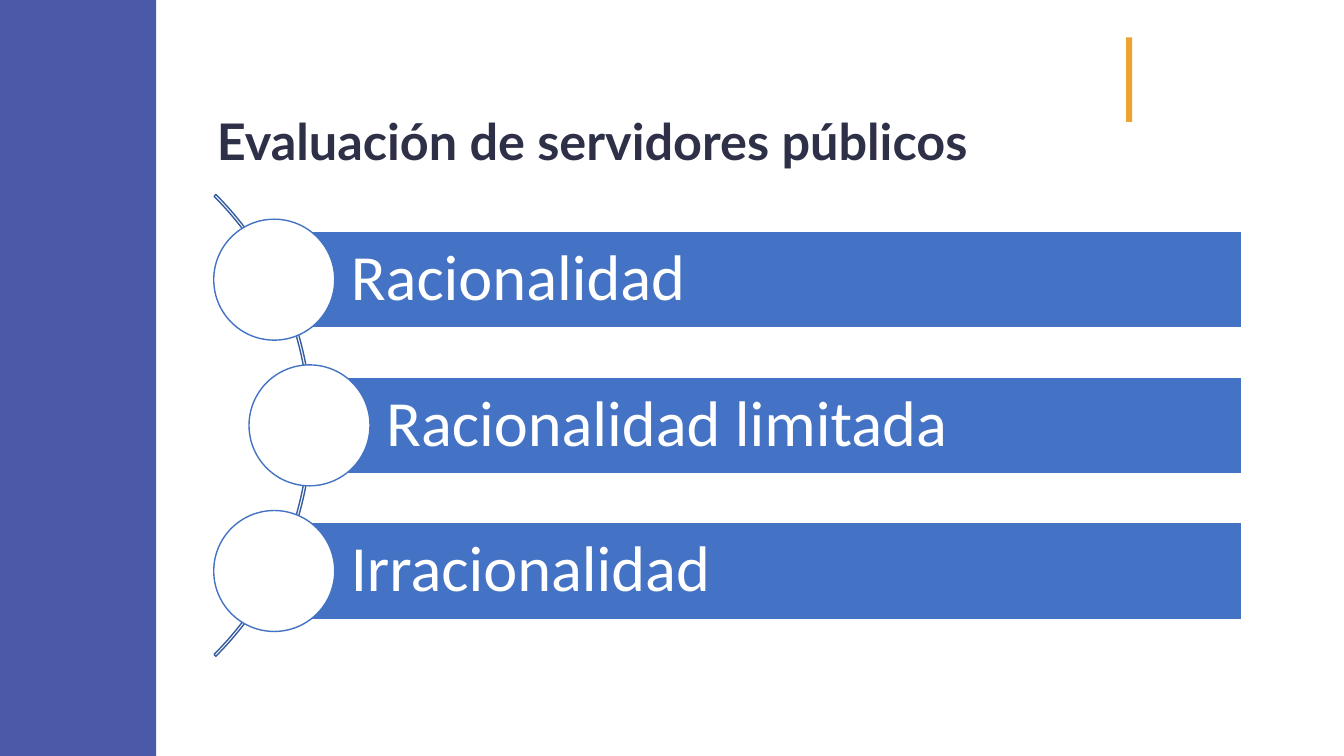
from pptx import Presentation, util as u
from pptx.dml.color import RGBColor
from pptx.enum import shapes, text

THEME = {
    "sidebar": "4A5AA8", "accent": "EEA232", "arc": "365B9D", "bar": "4472C4",
    "white": "FFFFFF", "title": "2E3048",
    "title_font": "Lato", "title_size": 36,
    "bar_font": "Calibri", "bar_size": 46,
}
SHAPE = shapes.MSO_SHAPE


def add_shape(kind, box, fill=None, line=None):
    """Add a flat preset shape; box is left, top, width, height in inches."""
    shape = slide.shapes.add_shape(kind, *map(u.Inches, box))
    shape.shadow.inherit = False
    for part, color in ((shape.fill, fill), (shape.line.fill, line)):
        if color:
            part.solid()
            part.fore_color.rgb = RGBColor.from_string(THEME[color])
        else:
            part.background()
    if line:
        shape.line.width = u.Pt(1)
    return shape


def write(shape, words, name, color, bold, margins):
    """Fill a shape with one left-aligned, vertically centred line."""
    frame = shape.text_frame
    frame.text = words
    side_names = ("margin_left", "margin_top", "margin_right", "margin_bottom")
    frame_format = {
        "word_wrap": True,
        "auto_size": text.MSO_AUTO_SIZE.NONE,
        "vertical_anchor": text.MSO_ANCHOR.MIDDLE,
        **dict(zip(side_names, map(u.Inches, margins))),
    }
    for key, value in frame_format.items():
        setattr(frame, key, value)
    paragraph = frame.paragraphs[0]
    paragraph.alignment = text.PP_ALIGN.LEFT
    paragraph.line_spacing = 0.9
    font = paragraph.runs[0].font
    font_format = {
        "name": THEME[name + "_font"],
        "size": u.Pt(THEME[name + "_size"]),
        "bold": bold,
    }
    for key, value in font_format.items():
        setattr(font, key, value)
    font.color.rgb = RGBColor.from_string(THEME[color])


presentation = Presentation()
presentation.slide_width = u.Inches(13.33)
presentation.slide_height = u.Inches(7.5)
slide = presentation.slides.add_slide(presentation.slide_layouts[5])

add_shape(SHAPE.RECTANGLE, (0, 0, 1.55, 7.5), "sidebar")
add_shape(SHAPE.RECTANGLE, (11.17, 0.37, 0.06, 0.84), "accent")

title = slide.shapes.title
title_box = {"left": 2.05, "top": 0.87, "width": 8.95, "height": 1.13}
for key, value in title_box.items():
    setattr(title, key, u.Inches(value))
write(title, "Evaluación de servidores públicos", "title", "title", True,
      (0.1, 0.05, 0.1, 0.05))

# Rows are spaced evenly around the arc's middle; the middle row is indented.
middle, row_pitch = 4.22, 1.445
bar_right, bar_height = 12.32, 0.96
circle_size, circle_center, indent = 1.2, 2.72, 0.35
arc_size = 6.48

arc = add_shape(SHAPE.BLOCK_ARC,
                (-3.39, middle - arc_size / 2, arc_size, arc_size), line="arc")
for index, value in enumerate((189, 27, 0.004)):
    arc.adjustments[index] = value

rows = ("Racionalidad", "Racionalidad limitada", "Irracionalidad")
for index, words in enumerate(rows):
    row_center = middle + (index - 1) * row_pitch
    left = circle_center + indent * (index == 1)
    bar = add_shape(SHAPE.RECTANGLE,
                    (left, row_center - bar_height / 2,
                     bar_right - left, bar_height), "bar", "white")
    write(bar, words, "bar", "white", False, (0.76, 0.13, 0.13, 0.13))
    add_shape(SHAPE.OVAL,
              (left - circle_size / 2, row_center - circle_size / 2,
               circle_size, circle_size), "white", "bar")

presentation.save("out.pptx")
